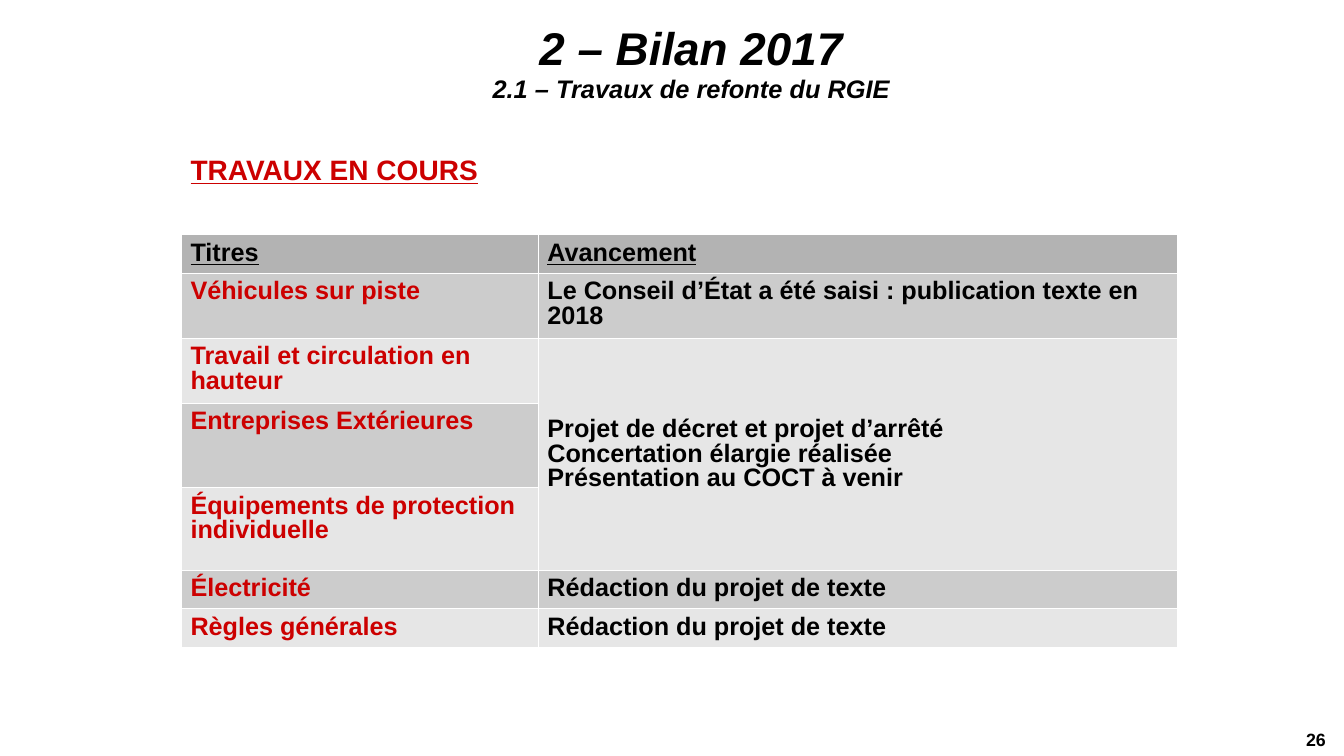
"""Build the slide on the RGIE overhaul: work in progress and its status."""
from dataclasses import dataclass
from typing import Optional

import lxml.etree
import pptx
import pptx.dml.color
import pptx.enum.text
import pptx.oxml.ns
import pptx.table
import pptx.text.text
import pptx.util

Inches = pptx.util.Inches
Pt = pptx.util.Pt
PP_ALIGN = pptx.enum.text.PP_ALIGN
ANCHOR = pptx.enum.text.MSO_ANCHOR

COLORS = {
    "black": "000000",
    "red": "CC0000",
    "white": "FFFFFF",
    "header": "B3B3B3",
    "dark": "CCCCCC",
    "light": "E6E6E6",
}


@dataclass(frozen=True)
class Style:
    """Character formatting of a run."""
    size: float
    color: str = "black"
    italic: bool = False
    underline: bool = False


@dataclass(frozen=True)
class Label:
    """A text box with one line."""
    text: str
    box: tuple[float, float, float, float]
    margins: tuple[float, float, float, float]
    align: PP_ALIGN
    style: Style


@dataclass(frozen=True)
class Row:
    """A table row; without status it continues the merged cell above."""
    title: str
    status: Optional[tuple[str, ...]]
    height: float


LABELS = [
    Label("26", (11.92, 7.23, 1.23, 0.27), (0, 0, 0, 0), PP_ALIGN.RIGHT, Style(12.7)),
    Label("TRAVAUX EN COURS", (1.8, 1.47, 3.26, 0.72), (0.09, 0.04, 0.09, 0.04),
          PP_ALIGN.LEFT, Style(20, "red", underline=True)),
]

ROWS = [
    Row("Titres", ("Avancement",), 0.37),
    Row("Véhicules sur piste",
        ("Le Conseil d’État a été saisi : publication texte en 2018",), 0.58),
    Row("Travail et circulation en hauteur",
        ("Projet de décret et projet d’arrêté", "Concertation élargie réalisée",
         "Présentation au COCT à venir"), 0.58),
    Row("Entreprises Extérieures", None, 0.84),
    Row("Équipements de protection individuelle", None, 0.82),
    Row("Électricité", ("Rédaction du projet de texte",), 0.33),
    Row("Règles générales", ("Rédaction du projet de texte",), 0.33),
]
COL_WIDTHS = (3.54, 6.33)


def add_run(p: pptx.text.text._Paragraph, text: str, style: Style) -> None:
    """Append a bold Arial run."""
    r = p.add_run()
    r.text = text
    r.font.name = "Arial"
    r.font.size = Pt(style.size)
    r.font.bold = True
    r.font.italic = style.italic
    r.font.underline = style.underline
    r.font.color.rgb = pptx.dml.color.RGBColor.from_string(COLORS[style.color])


def set_margins(target: object, margins: tuple[float, float, float, float]) -> None:
    """Set the left, top, right and bottom margins of a frame or cell."""
    for side, value in zip(("left", "top", "right", "bottom"), margins):
        setattr(target, f"margin_{side}", Inches(value))


def add_label(s: pptx.slide.Slide, label: Label) -> None:
    """Draw a text box."""
    tf = s.shapes.add_textbox(*map(Inches, label.box)).text_frame
    tf.word_wrap = True
    set_margins(tf, label.margins)
    p = tf.paragraphs[0]
    p.alignment = label.align
    add_run(p, label.text, label.style)


def format_title(s: pptx.slide.Slide) -> None:
    """Place and fill the title placeholder."""
    sp = s.shapes.title
    sp.left, sp.top, sp.width, sp.height = map(Inches, (2.58, 0.18, 8.55, 0.89))
    tf = sp.text_frame
    tf.word_wrap = True
    tf.auto_size = pptx.enum.text.MSO_AUTO_SIZE.NONE
    tf.vertical_anchor = ANCHOR.MIDDLE
    set_margins(tf, (0, 0.03, 0, 0))
    p = tf.paragraphs[0]
    p.alignment = PP_ALIGN.CENTER
    p.line_spacing = 0.93
    add_run(p, "2 – Bilan 2017", Style(32.7, italic=True))
    p.add_line_break()
    add_run(p, "2.1 – Travaux de refonte du RGIE", Style(18.1, italic=True))


def format_cell(cell: pptx.table._Cell, fill: str, top: float) -> None:
    """Give a cell thin white borders, its fill and its margins."""
    qn = pptx.oxml.ns.qn
    tc_pr = cell._tc.get_or_add_tcPr()
    for side in "LRTB":
        ln = lxml.etree.SubElement(tc_pr, qn(f"a:ln{side}"), w=str(Pt(0.06)))
        solid = lxml.etree.SubElement(ln, qn("a:solidFill"))
        lxml.etree.SubElement(solid, qn("a:srgbClr"), val=COLORS["white"])
    cell.fill.solid()
    cell.fill.fore_color.rgb = pptx.dml.color.RGBColor.from_string(COLORS[fill])
    set_margins(cell, (0.09, top, 0.09, 0.05))


def write_cell(cell: pptx.table._Cell, lines: tuple[str, ...], style: Style) -> None:
    """Write one paragraph per line."""
    tf = cell.text_frame
    for i, line in enumerate(lines):
        p = tf.add_paragraph() if i else tf.paragraphs[0]
        p.line_spacing = 0.87
        add_run(p, line, style)


def add_progress_table(s: pptx.slide.Slide) -> None:
    """Draw the table of titles and their progress."""
    height = sum(row.height for row in ROWS)
    table = s.shapes.add_table(len(ROWS), len(COL_WIDTHS), Inches(1.8), Inches(2.32),
                               Inches(sum(COL_WIDTHS)), Inches(height)).table
    table.horz_banding = False
    for col, width in zip(table.columns, COL_WIDTHS):
        col.width = Inches(width)
    status_row = 0
    for i, row in enumerate(ROWS):
        table.rows[i].height = Inches(row.height)
        header = i == 0
        fill = "header" if header else ("light", "dark")[i % 2]
        title, status = table.cell(i, 0), table.cell(i, 1)
        for cell in (title, status):
            format_cell(cell, fill, 0.08 if header else 0.07)
        title_color = "black" if header else "red"
        write_cell(title, (row.title,), Style(18, title_color, underline=header))
        if row.status:
            status_row = i
            write_cell(status, row.status, Style(18, underline=header))
        elif i + 1 == len(ROWS) or ROWS[i + 1].status:
            merged = table.cell(status_row, 1)
            merged.merge(status)
            merged.vertical_anchor = ANCHOR.MIDDLE


def main() -> None:
    """Build and save the presentation."""
    prs = pptx.Presentation()
    prs.slide_width, prs.slide_height = Inches(13.33), Inches(7.5)
    s = prs.slides.add_slide(prs.slide_layouts[5])
    format_title(s)
    for label in LABELS:
        add_label(s, label)
    add_progress_table(s)
    prs.save("out.pptx")


if __name__ == "__main__":
    main()
